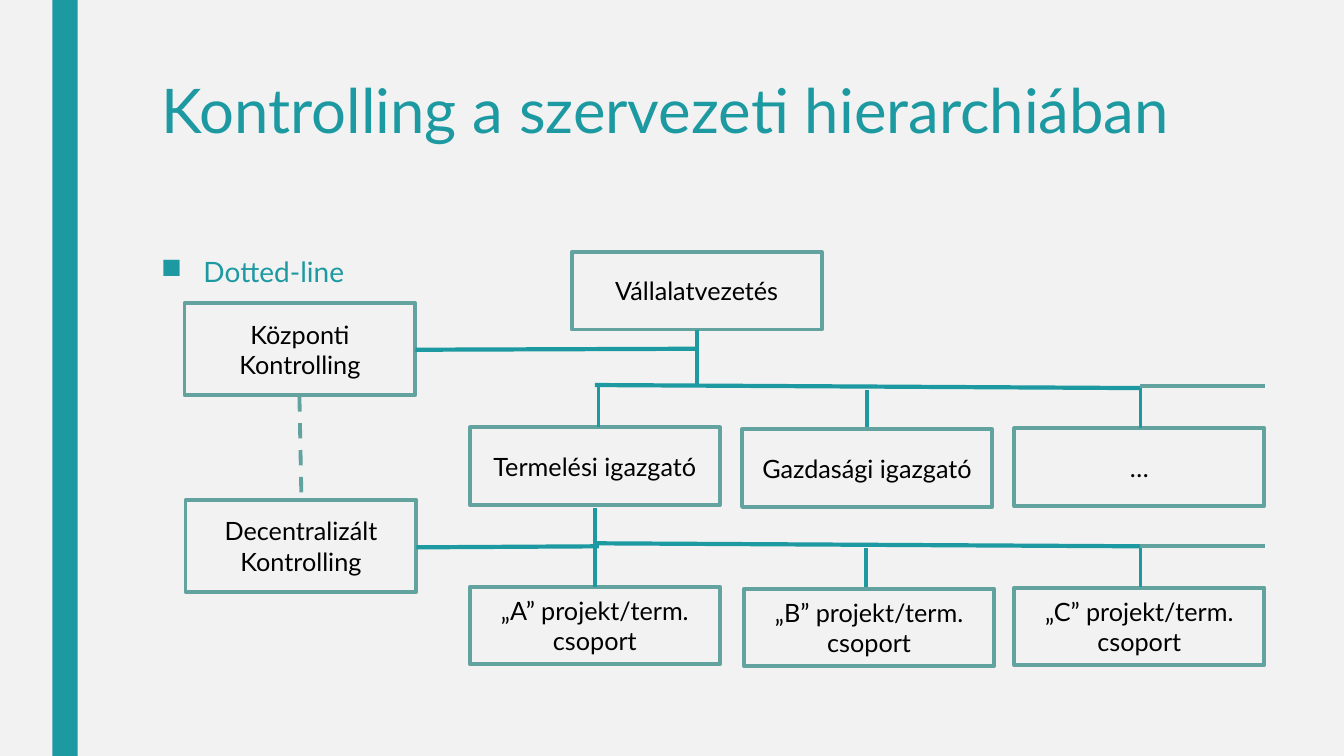
from pptx import Presentation
from pptx.dml.color import RGBColor
from pptx.enum.dml import MSO_LINE
from pptx.enum.shapes import MSO_CONNECTOR, MSO_SHAPE
from pptx.enum.text import MSO_ANCHOR, PP_ALIGN
from pptx.oxml.ns import qn
from pptx.util import Inches, Pt
from lxml import etree

RECT = MSO_SHAPE.RECTANGLE
LINE = MSO_CONNECTOR.STRAIGHT
DASH = MSO_LINE.DASH
LEFT, MID = PP_ALIGN.LEFT, PP_ALIGN.CENTER
TOP, CENTER = MSO_ANCHOR.TOP, MSO_ANCHOR.MIDDLE
HEX = {"back": "F2F2F2", "teal": "1D9AA1", "edge": "62A39F", "ink": "000000"}
RGB = {name: RGBColor.from_string(code) for name, code in HEX.items()}

deck = Presentation()
deck.slide_width, deck.slide_height = Inches(13.33), Inches(7.5)
slide = deck.slides.add_slide(deck.slide_layouts[6])
slide.background.fill.solid()
slide.background.fill.fore_color.rgb = RGB["back"]
shapes = slide.shapes


def write(shape, text, size=18, color="ink", align=MID, anchor=CENTER, space=1):
    frame = shape.text_frame
    frame.word_wrap = True
    frame.vertical_anchor = anchor
    para = frame.paragraphs[0]
    para.alignment = align
    para.line_spacing = space
    run = para.add_run()
    run.text = text
    run.font.name = "Lato"
    run.font.size = Pt(size)
    run.font.color.rgb = RGB[color]
    return para


# Side band
band = shapes.add_shape(RECT, Inches(0.52), 0, Inches(0.25), Inches(7.5))
band.shadow.inherit = False
band.fill.solid()
band.fill.fore_color.rgb = RGB["teal"]
band.line.fill.background()

# Title and bullet
title = shapes.add_textbox(Inches(1.5), Inches(0.75), Inches(10.5), Inches(1.62))
write(title, "Kontrolling a szervezeti hierarchiában", size=44, color="teal",
      align=LEFT, anchor=TOP, space=0.89)
body = shapes.add_textbox(Inches(1.5), Inches(2.5), Inches(10.5), Inches(3.92))
item = write(body, "Dotted-line", size=20, color="teal", align=LEFT, anchor=TOP,
             space=0.94)
item.space_before, item.space_after = Pt(10), Pt(2)
props = item._p.get_or_add_pPr()
props.set("marL", str(Inches(0.42)))
props.set("indent", str(-Inches(0.42)))
etree.SubElement(props, qn("a:buChar")).set("char", "■")

# Boxes: left, top, text; staff units are narrower and taller
unit, staff = (2.48, 0.77), (2.29, 0.91)
boxes = [
    (1.83, 3.01, staff, "Központi Kontrolling"),
    (1.84, 4.96, staff, "Decentralizált Kontrolling"),
    (5.67, 2.5, unit, "Vállalatvezetés"),
    (4.66, 4.24, unit, "Termelési igazgató"),
    (7.36, 4.26, unit, "Gazdasági igazgató"),
    (10.06, 4.25, unit, "…"),
    (4.66, 5.82, unit, "„A” projekt/term. csoport"),
    (7.38, 5.84, unit, "„B” projekt/term. csoport"),
    (10.06, 5.83, unit, "„C” projekt/term. csoport"),
]
for left, top, (width, height), text in boxes:
    box = shapes.add_shape(RECT, Inches(left), Inches(top), Inches(width), Inches(height))
    box.shadow.inherit = False
    box.fill.background()
    box.line.color.rgb = RGB["edge"]
    box.line.width = Pt(2.75)
    write(box, text)

# Lines: from x, y to x, y, colour, weight, dash
lines = [
    # Top management down to the directors
    (6.91, 3.27, 6.91, 3.81, "teal", 3, None),
    (5.9, 3.82, 11.31, 3.85, "teal", 3, None),
    (5.94, 3.84, 5.94, 4.24, "teal", 2.25, None),
    (8.6, 3.87, 8.6, 4.24, "teal", 3, None),
    (11.31, 3.85, 11.31, 4.25, "teal", 2.25, None),
    (11.31, 3.83, 12.55, 3.83, "edge", 2.75, None),
    # Directors down to the project groups
    (5.9, 5.04, 5.9, 5.82, "teal", 3, None),
    (5.9, 5.39, 11.31, 5.42, "teal", 3, None),
    (8.59, 5.44, 8.59, 5.82, "teal", 3, None),
    (11.31, 5.42, 11.31, 5.82, "teal", 2.25, None),
    (11.31, 5.42, 12.55, 5.42, "edge", 2.75, None),
    # Controlling units
    (4.12, 3.47, 6.91, 3.46, "teal", 3, None),
    (4.13, 5.43, 5.94, 5.42, "teal", 3, None),
    (2.97, 3.93, 2.99, 4.96, "edge", 2.75, DASH),
]
for x1, y1, x2, y2, color, weight, dash in lines:
    link = shapes.add_connector(LINE, Inches(x1), Inches(y1), Inches(x2), Inches(y2))
    link.line.color.rgb = RGB[color]
    link.line.width = Pt(weight)
    if dash:
        link.line.dash_style = dash
    etree.SubElement(link._element.spPr, qn("a:effectLst"))

deck.save("out.pptx")
